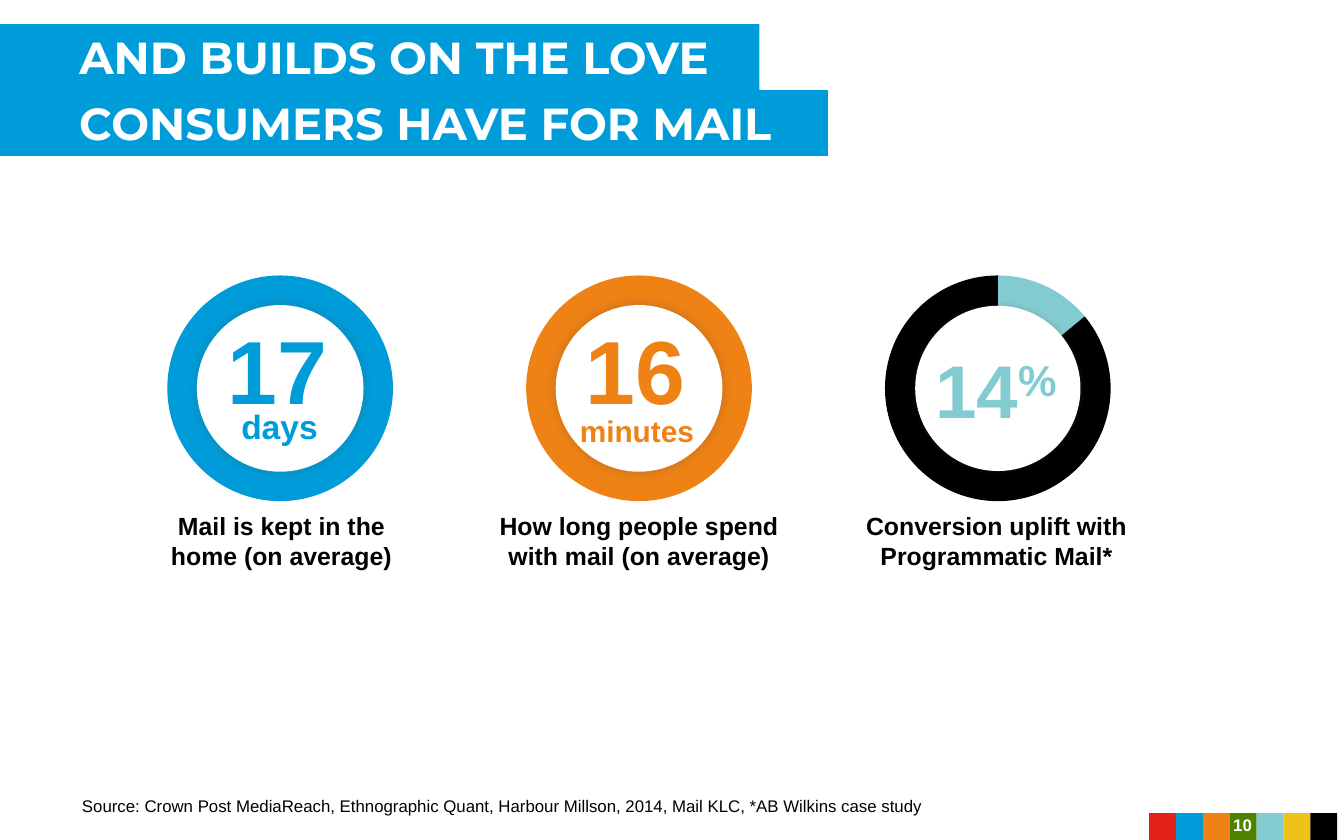
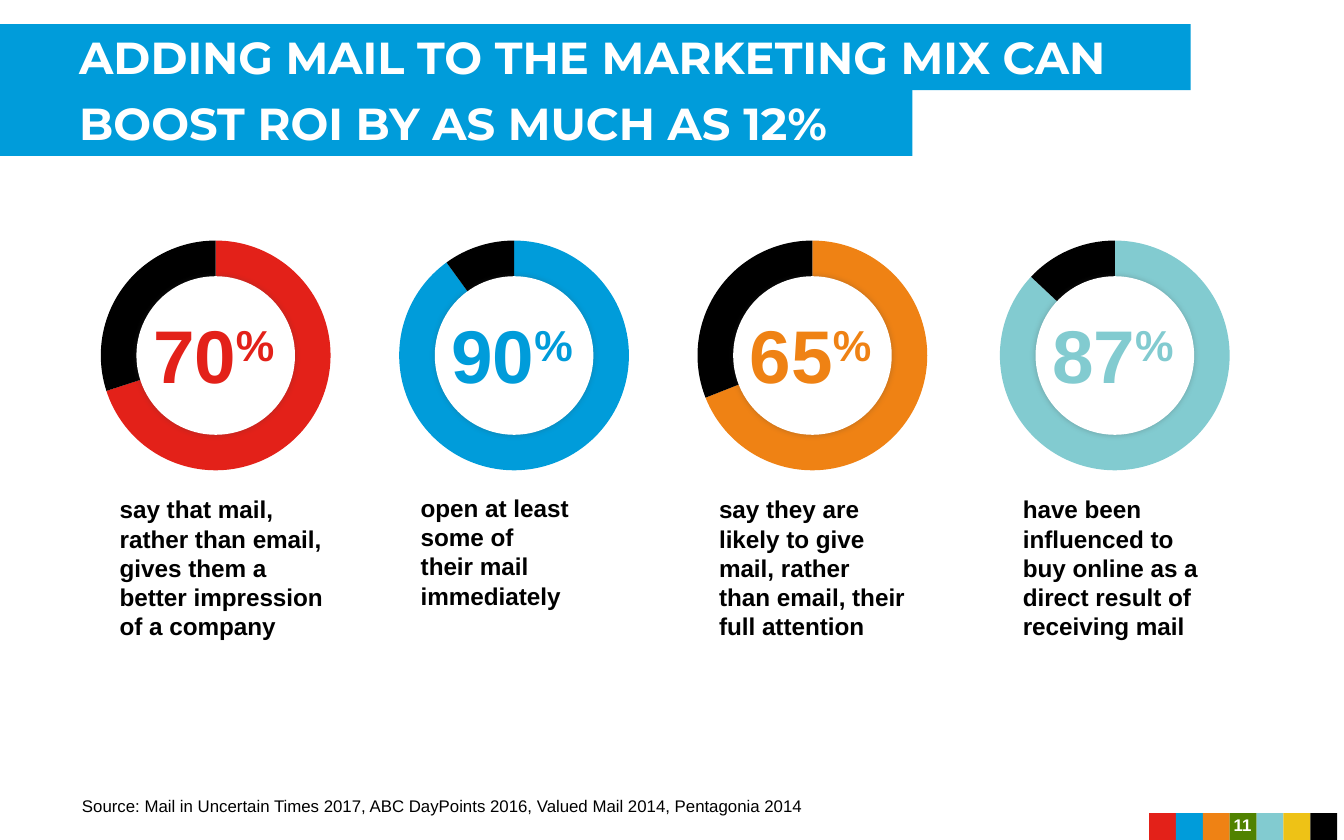
import pptx
import pptx.chart.data
import pptx.dml.color
import pptx.enum.chart
import pptx.enum.shapes
import pptx.enum.text
import pptx.oxml
import pptx.util
from lxml import etree

RGBColor = pptx.dml.color.RGBColor
Inches = pptx.util.Inches
Pt = pptx.util.Pt
Align = pptx.enum.text.PP_ALIGN
Anchor = pptx.enum.text.MSO_ANCHOR
Shape = pptx.enum.shapes.MSO_SHAPE

RED = RGBColor(0xE3, 0x21, 0x19)
BLUE = RGBColor(0x00, 0x9C, 0xDA)
ORANGE = RGBColor(0xEF, 0x82, 0x14)
GREEN = RGBColor(0x50, 0x82, 0x00)
AQUA = RGBColor(0x82, 0xCB, 0xD0)
YELLOW = RGBColor(0xEE, 0xC2, 0x16)
BLACK = RGBColor(0, 0, 0)
WHITE = RGBColor(0xFF, 0xFF, 0xFF)

THIN = (0.09, 0.04, 0.09, 0.04)
WIDE = (0.1, 0.05, 0.1, 0.05)
SHADE = (
    '<a:effectLst xmlns:a="http://schemas.openxmlformats.org/drawingml/2006/main">'
    '<a:outerShdw blurRad="{}" dist="0" dir="0" algn="ctr" rotWithShape="0">'
    '<a:srgbClr val="404040"><a:alpha val="{}"/></a:srgbClr>'
    "</a:outerShdw></a:effectLst>"
)


class Deck:
    """Hold the deck style and the current slide, and draw each kind of element."""

    def __init__(self):
        self.prs = pptx.Presentation()
        self.prs.slide_width = Inches(10)
        self.prs.slide_height = Inches(6.25)
        self.slide = None

    def page(self, number, title, source):
        self.slide = self.prs.slides.add_slide(self.prs.slide_layouts[6])
        for i, color in enumerate((RED, BLUE, ORANGE, GREEN, AQUA, YELLOW, BLACK)):
            self.block(Shape.RECTANGLE, 8.55 + 0.2 * i, 6.05, 0.2, 0.2, color)
        for i, (line, width) in enumerate(title):
            self.band(line, 0.18 + 0.49 * i, width)
        self.text(str(number), 8.97, 5.97, 0.55, 0.33, 9, WHITE,
                  anchor=Anchor.MIDDLE, pad=THIN)
        self.text(source, 0.52, 5.87, 6.97, 0.24, 9, BLACK, bold=False,
                  align=Align.LEFT, anchor=Anchor.BOTTOM, pad=THIN)

    def block(self, kind, x, y, w, h, color):
        shape = self.slide.shapes.add_shape(kind, Inches(x), Inches(y), Inches(w), Inches(h))
        shape.shadow.inherit = False
        shape.fill.solid()
        shape.fill.fore_color.rgb = color
        shape.line.fill.background()
        return shape

    def label(self, shape, text, size, color, font="Arial", bold=True,
              align=Align.CENTER, anchor=Anchor.TOP, pad=WIDE, wrap=True):
        frame = shape.text_frame
        frame.text = text
        frame.word_wrap = wrap
        frame.vertical_anchor = anchor
        (frame.margin_left, frame.margin_top,
         frame.margin_right, frame.margin_bottom) = map(Inches, pad)
        par = frame.paragraphs[0]
        par.alignment = align
        for run in par.runs:
            self.style(run, size, color, font, bold)
        return par

    def style(self, run, size, color, font="Arial", bold=True):
        run.font.name = font
        run.font.size = Pt(size)
        run.font.bold = bold
        run.font.color.rgb = color

    def text(self, text, x, y, w, h, size, color, **look):
        box = self.slide.shapes.add_textbox(Inches(x), Inches(y), Inches(w), Inches(h))
        return self.label(box, text, size, color, **look)

    def band(self, line, y, width):
        bar = self.block(Shape.RECTANGLE, -0.04, y, width, 0.49, BLUE)
        self.label(bar, line, 24, WHITE, font="Montserrat", align=Align.LEFT,
                   pad=(0.63, 0.04, 0.09, 0.04), wrap=False)

    def percent(self, value, x, y, w, color):
        par = self.text(value, x, y, w, 0.77, 40, color, anchor=Anchor.MIDDLE, wrap=False)
        sign = par.add_run()
        sign.text = "%"
        self.style(sign, 40, color)
        sign.font._element.set("baseline", "30000")

    def ring(self, x, y, w, h, size, hole, share, colors, disc, blur):
        data = pptx.chart.data.CategoryChartData()
        data.categories = ["1", "2"]
        data.add_series("Series 1", (share, 100 - share))
        chart = self.slide.shapes.add_chart(
            pptx.enum.chart.XL_CHART_TYPE.DOUGHNUT,
            Inches(x), Inches(y), Inches(w), Inches(h), data).chart
        chart.has_legend = False
        chart.has_title = False
        chart.font.name = "Arial"
        chart.font.size = Pt(18)
        chart.font.color.rgb = BLACK
        plot = chart.plots[0]
        plot.vary_by_categories = False
        for i, color in enumerate(colors):
            form = plot.series[0].points[i].format
            form.fill.solid()
            form.fill.fore_color.rgb = color
            form.line.fill.background()
        plot._element.find("{*}holeSize").set("val", str(hole))
        self.place(chart, size / w, size / h)
        cover = self.block(Shape.OVAL, x + (w - disc) / 2, y + (h - disc) / 2,
                           disc, disc, WHITE)
        props = cover._element.spPr
        props.remove(props.find("{*}effectLst"))
        props.append(pptx.oxml.parse_xml(SHADE.format(Pt(blur), 25000)))

    def place(self, chart, wide, high):
        area = chart._chartSpace.chart.plotArea
        tag = "{" + area.nsmap["c"] + "}"
        old = area.find(tag + "layout")
        if old is not None:
            area.remove(old)
        layout = etree.Element(tag + "layout")
        area.insert(0, layout)
        manual = etree.SubElement(layout, tag + "manualLayout")
        rules = {"layoutTarget": "inner", "xMode": "edge", "yMode": "edge",
                 "x": (1 - wide) / 2, "y": (1 - high) / 2, "w": wide, "h": high}
        for name, value in rules.items():
            etree.SubElement(manual, tag + name).set("val", str(value))


def love(deck):
    deck.page(10, (("AND BUILDS ON THE LOVE", 5.69), ("CONSUMERS HAVE FOR MAIL", 6.2)),
              "Source: Crown Post MediaReach, Ethnographic Quant, Harbour Millson, 2014, "
              "Mail KLC, *AB Wilkins case study")
    rings = (
        (100, (BLUE, BLACK), 1.24, 6),
        (100, (ORANGE, ORANGE), 1.24, 6),
        (14, (AQUA, BLACK), 1.23, 3),
    )
    for i, (share, colors, disc, blur) in enumerate(rings):
        deck.ring(0.97 + 2.67 * i, 1.91, 2.23, 1.96, 1.68, 76, share, colors, disc, blur)
    counts = (
        ("17", 1.59, "days", 1.69, 2.97, 0.78, 0.4, 18, BLUE),
        ("16", 4.25, "minutes", 4.21, 3.02, 1.06, 0.37, 16, ORANGE),
    )
    for count, left, unit, x, y, w, h, size, color in counts:
        deck.text(count, left, 2.29, 0.95, 0.91, 48, color, anchor=Anchor.MIDDLE, wrap=False)
        deck.text(unit, x, y, w, h, size, color, anchor=Anchor.MIDDLE, wrap=False)
    deck.percent("14", 6.83, 2.51, 1.16, AQUA)
    notes = (
        ("Mail is kept in the home (on average)", 1.11, 1.97),
        ("How long people spend with mail (on average)", 3.56, 2.39),
        ("Conversion uplift with Programmatic Mail*", 6.3, 2.23),
    )
    for note, x, w in notes:
        deck.text(note, x, 3.75, w, 0.55, 13.3, BLACK)


def boost(deck):
    deck.page(11, (("ADDING MAIL TO THE MARKETING MIX CAN", 8.9),
                   ("BOOST ROI BY AS MUCH AS 12%", 6.83)),
              "Source: Mail in Uncertain Times 2017, ABC DayPoints 2016, "
              "Valued Mail 2014, Pentagonia 2014")
    facts = (
        (0.47, 70, "70", RED, 0.8, 3.64, 1.72,
         "say that mail, rather than email, gives them a better impression of a company"),
        (2.69, 90, "90", BLUE, 3.04, 3.63, 1.58,
         "open at least some of \vtheir mail immediately"),
        (4.91, 69, "65", ORANGE, 5.26, 3.64, 1.58,
         "say they are likely to give mail, rather than email, their full attention"),
        (7.16, 87, "87", AQUA, 7.52, 3.64, 1.61,
         "have been influenced to buy online as a direct result of receiving mail"),
    )
    for x, share, value, color, left, top, w, note in facts:
        deck.ring(x, 1.65, 2.27, 1.99, 1.71, 69, share, (color, BLACK), 1.18, 3)
        deck.percent(value, x + 0.46, 2.25, 1.32, color)
        deck.text(note, left, top, w, 1.58, 13, BLACK, align=Align.LEFT, pad=THIN)


def main():
    deck = Deck()
    love(deck)
    boost(deck)
    deck.prs.save("out.pptx")


if __name__ == "__main__":
    main()
